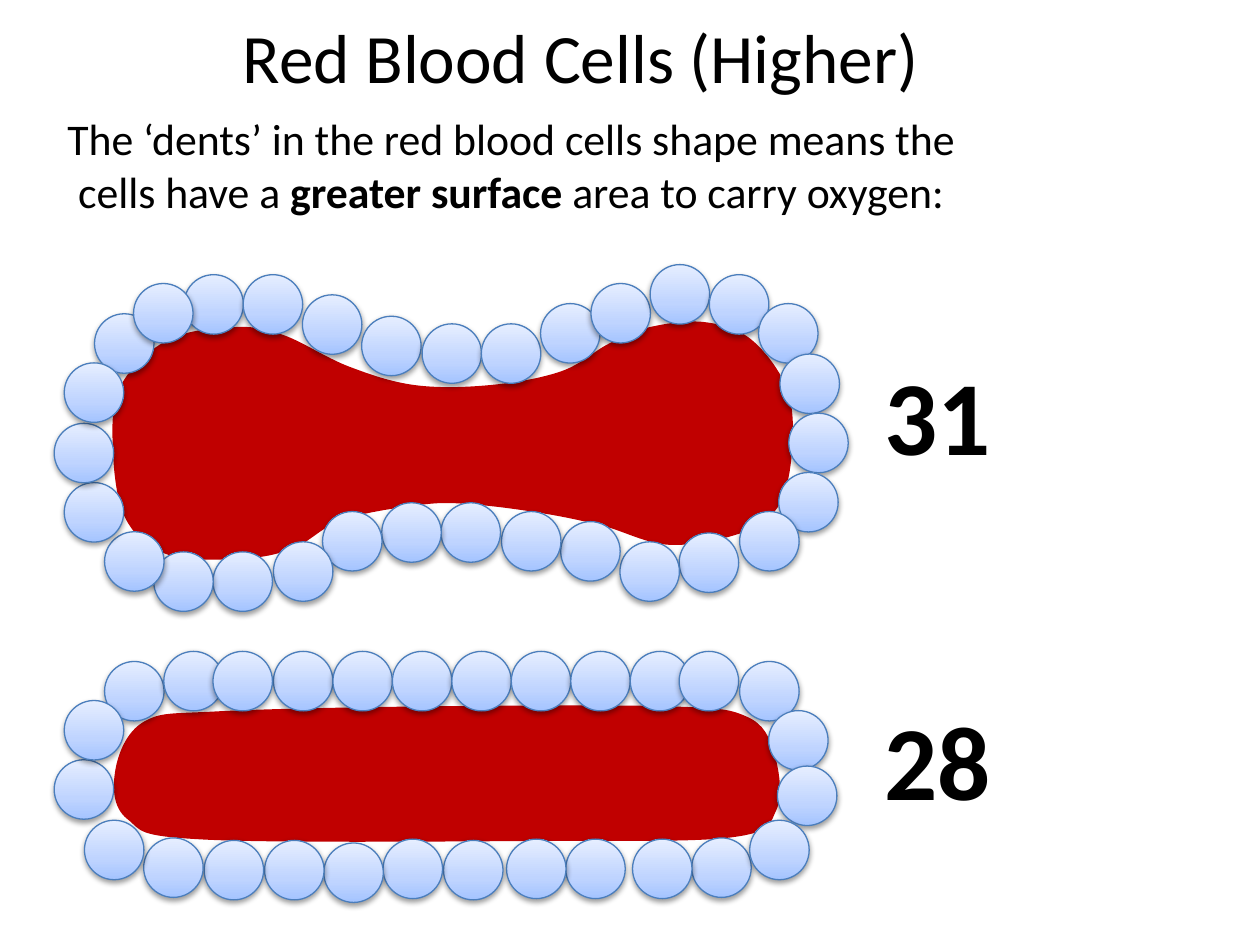
from copy import deepcopy

from lxml.etree import SubElement
from pptx import Presentation
from pptx.dml.color import RGBColor
from pptx.enum.shapes import MSO_SHAPE
from pptx.enum.text import MSO_ANCHOR, PP_ALIGN
from pptx.oxml.ns import qn
from pptx.util import Inches, Pt

# The slide is a grid of 1000 columns by 750 rows
WIDE, HIGH = Inches(10), Inches(7.5)
UNIT = WIDE // 1000
BEAD = 47.2
STOPS = [(0, "A4C4FF"), (0.35, "BFD4FF"), (1, "E6EEFF")]

# Outline points and bead corners, counted from the corner of each cell's box
DENTED = [
    (286, 97), (346, 97), (403, 86), (441, 64), (473, 51), (516, 47), (553, 61),
    (581, 101), (584, 151), (573, 192), (544, 212), (488, 221), (436, 206),
    (388, 196), (333, 189), (293, 189), (229, 201), (189, 224), (148, 232),
    (91, 229), (58, 201), (48, 146), (54, 97), (91, 61), (143, 51), (181, 57),
    (233, 82),
]
DENT_BEADS = [
    (32, 39), (103, 8), (150, 8), (197, 24), (244, 41), (292, 47), (339, 47),
    (386, 31), (426, 15), (473, 0), (520, 8), (559, 31), (576, 71), (583, 118),
    (575, 165), (544, 196), (496, 213), (449, 220), (402, 204), (355, 196),
    (307, 189), (260, 189), (213, 196), (174, 220), (126, 228), (79, 228),
    (40, 212), (8, 173), (0, 126), (8, 78), (63, 15),
]
FLAT = [
    (300, 45), (487, 45), (549, 53), (570, 81), (572, 125), (539, 146),
    (394, 149), (120, 148), (59, 132), (50, 94), (72, 57), (130, 49),
]
FLAT_BEADS = [
    (40, 8), (87, 0), *[(174 + BEAD * i, 0) for i in range(7)], (496, 0),
    (544, 8), (567, 47), (574, 91), (506, 148), (459, 149), (406, 149),
    (359, 149), (309, 150), (261, 149), (214, 152), (167, 150), (119, 150),
    (71, 148), (24, 134), (0, 86), (8, 39), (126, 0), (552, 134),
]


def grid(*cells):
    return [round(n * UNIT) for n in cells]


def tint(code):
    return RGBColor.from_string(code)


def add_text(slide, box, runs, size, anchor=MSO_ANCHOR.TOP):
    frame = slide.shapes.add_textbox(*grid(*box)).text_frame
    frame.word_wrap = True
    frame.vertical_anchor = anchor
    para = frame.paragraphs[0]
    para.alignment = PP_ALIGN.CENTER
    for words, bold in runs:
        run = para.add_run()
        run.text = words
        font = run.font
        font.name, font.size, font.bold = "Calibri", Pt(size), bold
        font.color.rgb = tint("000000")


def bend(body):
    """Turn the straight sides of a closed outline into smooth curves."""
    sides = list(body.element.iter(qn("a:lnTo")))
    ends = [(int(side[0].get("x")), int(side[0].get("y"))) for side in sides]
    count = len(ends)
    for i, side in enumerate(sides):
        a, b, c, d = [ends[(i + k) % count] for k in (-2, -1, 0, 1)]
        first = [q + (r - p) / 6 for p, q, r in zip(a, b, c)]
        second = [r - (s - q) / 6 for q, r, s in zip(b, c, d)]
        side.tag = qn("a:cubicBezTo")
        for spot, (x, y) in enumerate((first, second)):
            point = deepcopy(side[-1])
            point.set("x", str(round(x)))
            point.set("y", str(round(y)))
            side.insert(spot, point)


def add_body(slide, left, top, knots):
    points = [grid(left + x, top + y) for x, y in knots]
    maker = slide.shapes.build_freeform(*points[0])
    maker.add_line_segments(points[1:] + points[:1], close=True)
    body = maker.convert_to_shape()
    bend(body)
    body.shadow.inherit = False
    body.fill.solid()
    body.fill.fore_color.rgb = body.line.color.rgb = tint("C00000")
    body.line.width = Pt(2)


def add_bead(slide, x, y):
    bead = slide.shapes.add_shape(MSO_SHAPE.OVAL, *grid(x, y, BEAD, BEAD))
    bead.line.color.rgb = tint("4B7EBC")
    bead.line.width = Pt(0.75)
    # Three-stop gradient, light at the top
    bead.fill.gradient()
    bead.fill.gradient_angle = 90
    props = bead.element.spPr
    stops = props.find(".//" + qn("a:gsLst"))
    stops.insert(1, deepcopy(stops[0]))
    for stop, (place, code) in zip(bead.fill.gradient_stops, STOPS):
        stop.position = place
        stop.color.rgb = tint(code)
    # Soft shadow below
    bead.shadow.inherit = False
    shade = SubElement(props.find(qn("a:effectLst")), qn("a:outerShdw"),
                       blurRad="40000", dist="20000", dir="5400000", rotWithShape="0")
    black = SubElement(shade, qn("a:srgbClr"), val="000000")
    SubElement(black, qn("a:alpha"), val="38000")


def add_cell(slide, left, top, knots, beads, drop):
    """One cell, its ring of beads and their count on the right."""
    add_body(slide, left, top, knots)
    for x, y in beads:
        add_bead(slide, left + x, top + y)
    add_text(slide, (left + 646, top + drop, 110, 111), [(str(len(beads)), True)], 60)


def add_head(slide, left, top):
    add_text(slide, (left + 8, top, 882, 47), [("Red Blood Cells (Higher)", False)],
             39.6, MSO_ANCHOR.MIDDLE)
    add_text(slide, (left, top + 63, 787, 646), [
        ("The ‘dents’ in the red blood cells shape means the cells have a ", False),
        ("greater surface ", True),
        ("area to carry oxygen:", False),
    ], 25)


def main():
    deck = Presentation()
    deck.slide_width, deck.slide_height = WIDE, HIGH
    slide = deck.slides.add_slide(deck.slide_layouts[6])
    add_head(slide, 12, 21)
    add_cell(slide, 43, 210, DENTED, DENT_BEADS, 63)
    add_cell(slide, 43, 517, FLAT, FLAT_BEADS, 30)
    deck.save("out.pptx")


if __name__ == "__main__":
    main()
